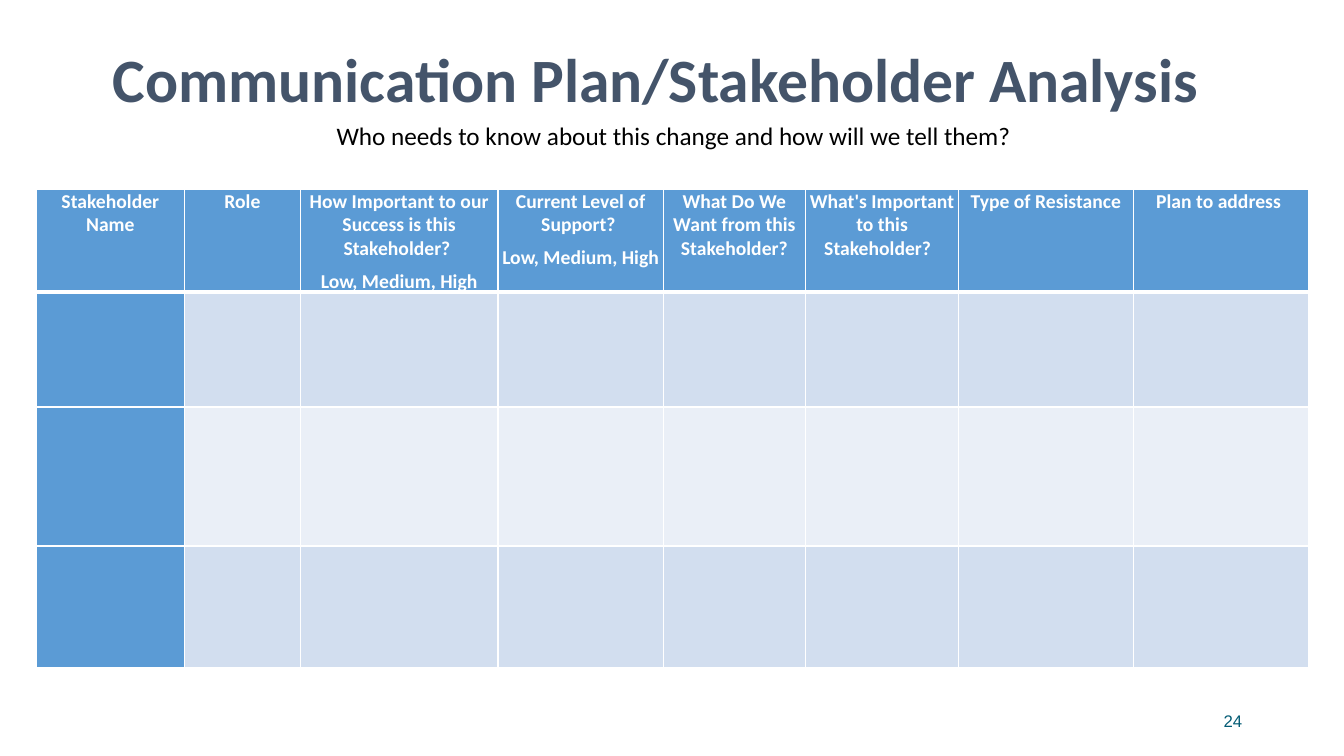
from lxml import etree
from pptx import Presentation
from pptx.dml.color import RGBColor
from pptx.enum.text import MSO_ANCHOR, MSO_AUTO_SIZE, PP_ALIGN
from pptx.oxml.ns import qn
from pptx.util import Inches, Pt

LEFT, CENTER, RIGHT = PP_ALIGN.LEFT, PP_ALIGN.CENTER, PP_ALIGN.RIGHT
TOP, MIDDLE, BOTTOM = MSO_ANCHOR.TOP, MSO_ANCHOR.MIDDLE, MSO_ANCHOR.BOTTOM
NO_AUTOFIT = MSO_AUTO_SIZE.NONE
TITLE_ONLY = 5

WHITE = RGBColor(0xFF, 0xFF, 0xFF)
BLACK = RGBColor(0x00, 0x00, 0x00)
SLATE = RGBColor(0x44, 0x54, 0x6A)
TEAL = RGBColor(0x04, 0x5C, 0x75)
BLUE = RGBColor(0x5B, 0x9B, 0xD5)
BANDS = (RGBColor(0xD2, 0xDE, 0xEF), RGBColor(0xEA, 0xEF, 0xF7))

LEVELS = "Low, Medium, High"
HEADERS = [
    "Stakeholder Name",
    "Role",
    "How Important to our Success is this Stakeholder? \n" + LEVELS,
    "Current Level of Support? \n" + LEVELS,
    "What Do We Want from this Stakeholder?",
    "What's Important to this Stakeholder?  ",
    "Type of Resistance",
    "Plan to address ",
]
COLUMN_WIDTHS = [1.47, 1.15, 1.96, 1.64, 1.41, 1.52, 1.73, 1.74]
ROW_HEIGHTS = [0.59, 1.14, 1.38, 1.21]


class SlideBuilder:
    def __init__(self, slide, font="Calibri"):
        self.slide = slide
        self.font = font

    def format_text(self, text_frame, size, color, bold=False, align=LEFT, font=None):
        for paragraph in text_frame.paragraphs:
            paragraph.alignment = align
            for run in paragraph.runs:
                run.font.name = font or self.font
                run.font.size = Pt(size)
                run.font.bold = bold
                run.font.color.rgb = color

    def title(self, text, left, top, width, height):
        shape = self.slide.shapes.title
        shape.left, shape.top = Inches(left), Inches(top)
        shape.width, shape.height = Inches(width), Inches(height)
        frame = shape.text_frame
        frame.text = text
        frame.word_wrap = True
        frame.auto_size = NO_AUTOFIT
        frame.vertical_anchor = BOTTOM
        frame.margin_left = frame.margin_right = frame.margin_bottom = 0
        frame.margin_top = Inches(0.05)
        self.format_text(frame, 44, SLATE, bold=True)

    def text(self, text, left, top, width, height, size, color, anchor=TOP,
             align=LEFT, font=None):
        box = self.slide.shapes.add_textbox(
            Inches(left), Inches(top), Inches(width), Inches(height))
        frame = box.text_frame
        frame.text = text
        frame.word_wrap = True
        frame.vertical_anchor = anchor
        self.format_text(frame, size, color, align=align, font=font)

    def cell_style(self, cell, fill, bottom_width):
        """Draw white borders around a cell and fill it."""
        properties = cell._tc.get_or_add_tcPr()
        for side in ("L", "R", "T", "B"):
            width = bottom_width if side == "B" else 1
            line = etree.SubElement(properties, qn(f"a:ln{side}"), w=str(Pt(width)))
            solid = etree.SubElement(line, qn("a:solidFill"))
            etree.SubElement(solid, qn("a:srgbClr"), val=str(WHITE))
        cell.fill.solid()
        cell.fill.fore_color.rgb = fill

    def header_cell(self, cell, text):
        cell.margin_left = cell.margin_right = Inches(0.04)
        cell.margin_top = cell.margin_bottom = 0
        cell.text_frame.text = text
        self.format_text(cell.text_frame, 14, WHITE, bold=True, align=CENTER)
        for paragraph in cell.text_frame.paragraphs:
            paragraph.space_before = paragraph.space_after = Pt(3)

    def table(self, headers, widths, heights, left, top, width, height):
        frame = self.slide.shapes.add_table(
            len(heights), len(widths),
            Inches(left), Inches(top), Inches(width), Inches(height))
        table = frame.table
        for column, column_width in zip(table.columns, widths):
            column.width = Inches(column_width)
        for row_index, row_height in enumerate(heights):
            row = table.rows[row_index]
            row.height = Inches(row_height)
            is_header = row_index == 0
            for column_index, cell in enumerate(row.cells):
                if is_header:
                    self.header_cell(cell, headers[column_index])
                in_blue = is_header or column_index == 0
                fill = BLUE if in_blue else BANDS[(row_index - 1) % 2]
                self.cell_style(cell, fill, 3 if is_header else 1)
        # The frame is taller than its rows, so the header row can grow.
        frame.height = Inches(height)


def main():
    presentation = Presentation()
    presentation.slide_width = Inches(13.33)
    presentation.slide_height = Inches(7.5)
    slide = presentation.slides.add_slide(presentation.slide_layouts[TITLE_ONLY])
    builder = SlideBuilder(slide)

    builder.text("24", 9.42, 6.95, 3, 0.4, 12, TEAL, MIDDLE, RIGHT, "Arial")
    builder.title("Communication Plan/Stakeholder Analysis", 1.12, 0.6, 10.99, 0.54)
    builder.text("Who needs to know about this change and how will we tell them?",
                 3.24, 1.14, 6.99, 0.4, 18, BLACK)
    builder.table(HEADERS, COLUMN_WIDTHS, ROW_HEIGHTS, 0.36, 1.88, 12.62, 4.75)

    presentation.save("out.pptx")


if __name__ == "__main__":
    main()
